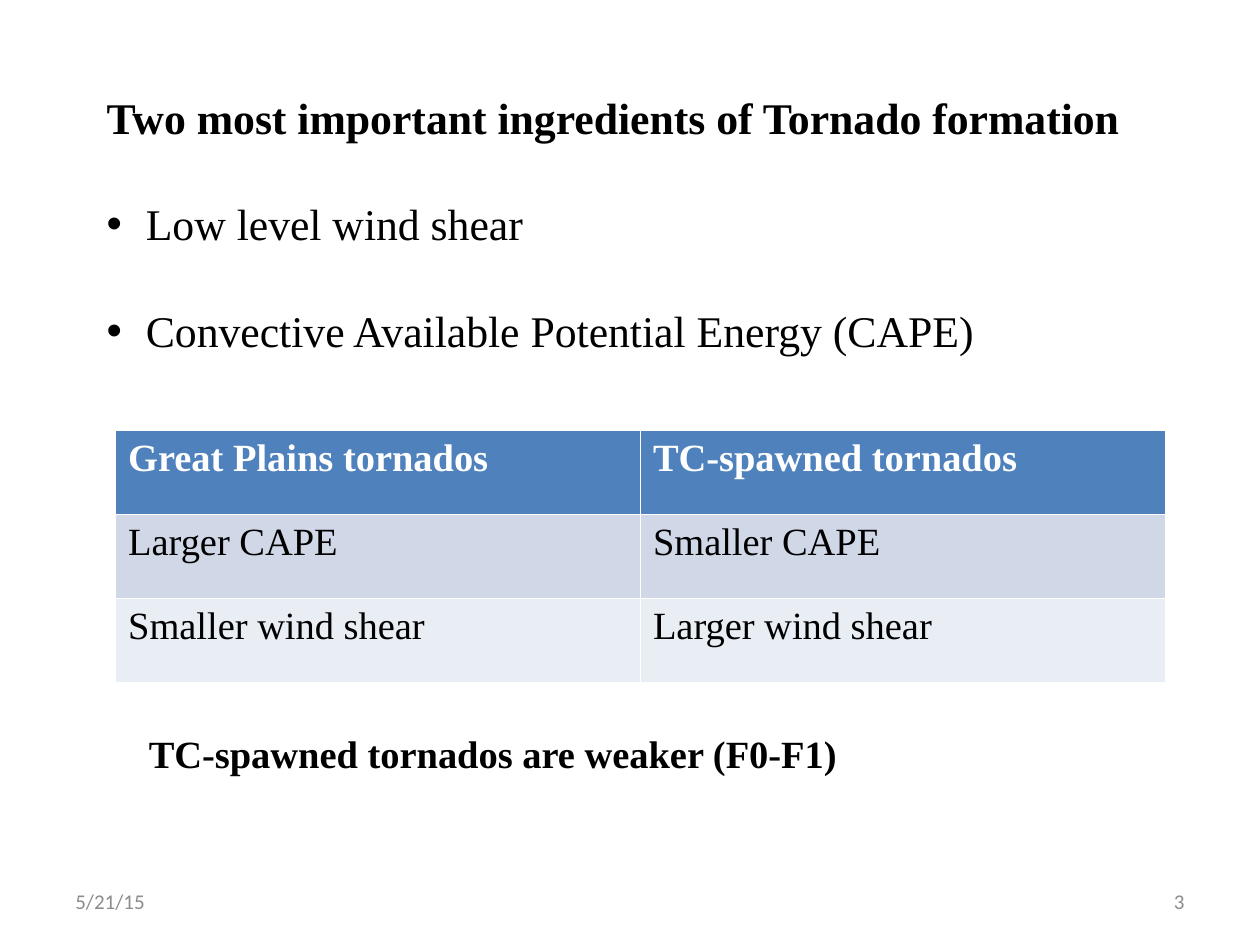
from lxml.etree import SubElement
from pptx import Presentation
from pptx.dml.color import RGBColor
from pptx.enum.text import MSO_ANCHOR, PP_ALIGN
from pptx.oxml.ns import qn
from pptx.util import Cm, Pt

BLACK = RGBColor(0x00, 0x00, 0x00)
WHITE = RGBColor(0xFF, 0xFF, 0xFF)
GREY = RGBColor(0x8C, 0x8C, 0x8C)
HEADER_BLUE = RGBColor(0x4F, 0x81, 0xBD)
BAND_DARK = RGBColor(0xD0, 0xD8, 0xE8)
BAND_LIGHT = RGBColor(0xE9, 0xED, 0xF4)
SERIF = "Times New Roman"
SANS = "Calibri"

COMPARISON = [
    ("Great Plains tornados", "TC-spawned tornados"),
    ("Larger CAPE", "Smaller CAPE"),
    ("Smaller wind shear", "Larger wind shear"),
]
ROW_STYLES = [(HEADER_BLUE, WHITE, True), (BAND_DARK, BLACK, False), (BAND_LIGHT, BLACK, False)]


def format_paragraph(paragraph, size, bold=False, color=BLACK, font_name=SERIF):
    for run in paragraph.runs:
        run.font.name = font_name
        run.font.size = Pt(size)
        run.font.bold = bold
        run.font.color.rgb = color


def add_text(slide, text, left, top, width, height):
    frame = slide.shapes.add_textbox(Cm(left), Cm(top), Cm(width), Cm(height)).text_frame
    frame.word_wrap = True
    frame.text = text
    return frame


def add_bullet(paragraph):
    properties = paragraph._p.get_or_add_pPr()
    properties.set("marL", str(Cm(0.79)))
    properties.set("indent", str(-Cm(0.79)))
    SubElement(properties, qn("a:buFont"), typeface="Arial")
    SubElement(properties, qn("a:buChar"), char="•")


def add_ingredients(slide):
    frame = add_text(
        slide,
        "Two most important ingredients of Tornado formation\n"
        "Low level wind shear\n"
        "Convective Available Potential Energy (CAPE)",
        1.9, 1.7, 22.02, 6.38,
    )
    heading, *ingredients = frame.paragraphs
    format_paragraph(heading, 25, bold=True)
    for ingredient in ingredients:
        ingredient.space_before = Pt(31)
        add_bullet(ingredient)
        format_paragraph(ingredient, 25)


def add_comparison(slide):
    table = slide.shapes.add_table(
        len(COMPARISON), 2, Cm(2.33), Cm(8.68), Cm(21.16), Cm(5.08)
    ).table
    for row, labels, (fill, color, bold) in zip(table.rows, COMPARISON, ROW_STYLES):
        for cell, label in zip(row.cells, labels):
            cell.text = label
            cell.fill.solid()
            cell.fill.fore_color.rgb = fill
            format_paragraph(cell.text_frame.paragraphs[0], 22, bold, color)


def add_conclusion(slide):
    frame = add_text(slide, "TC-spawned tornados are weaker (F0-F1)", 2.75, 14.6, 15.45, 1.19)
    format_paragraph(frame.paragraphs[0], 22, bold=True)


def add_footer(slide, text, left, alignment):
    frame = add_text(slide, text, left, 17.65, 5.93, 1.02)
    frame.vertical_anchor = MSO_ANCHOR.MIDDLE
    frame.paragraphs[0].alignment = alignment
    format_paragraph(frame.paragraphs[0], 12, color=GREY, font_name=SANS)


def main():
    presentation = Presentation()
    presentation.slide_width = Cm(25.4)
    presentation.slide_height = Cm(19.05)
    slide = presentation.slides.add_slide(presentation.slide_layouts[6])
    add_footer(slide, "5/21/15", 1.27, PP_ALIGN.LEFT)
    add_footer(slide, "3", 18.2, PP_ALIGN.RIGHT)
    add_ingredients(slide)
    add_comparison(slide)
    add_conclusion(slide)
    presentation.save("out.pptx")


if __name__ == "__main__":
    main()
